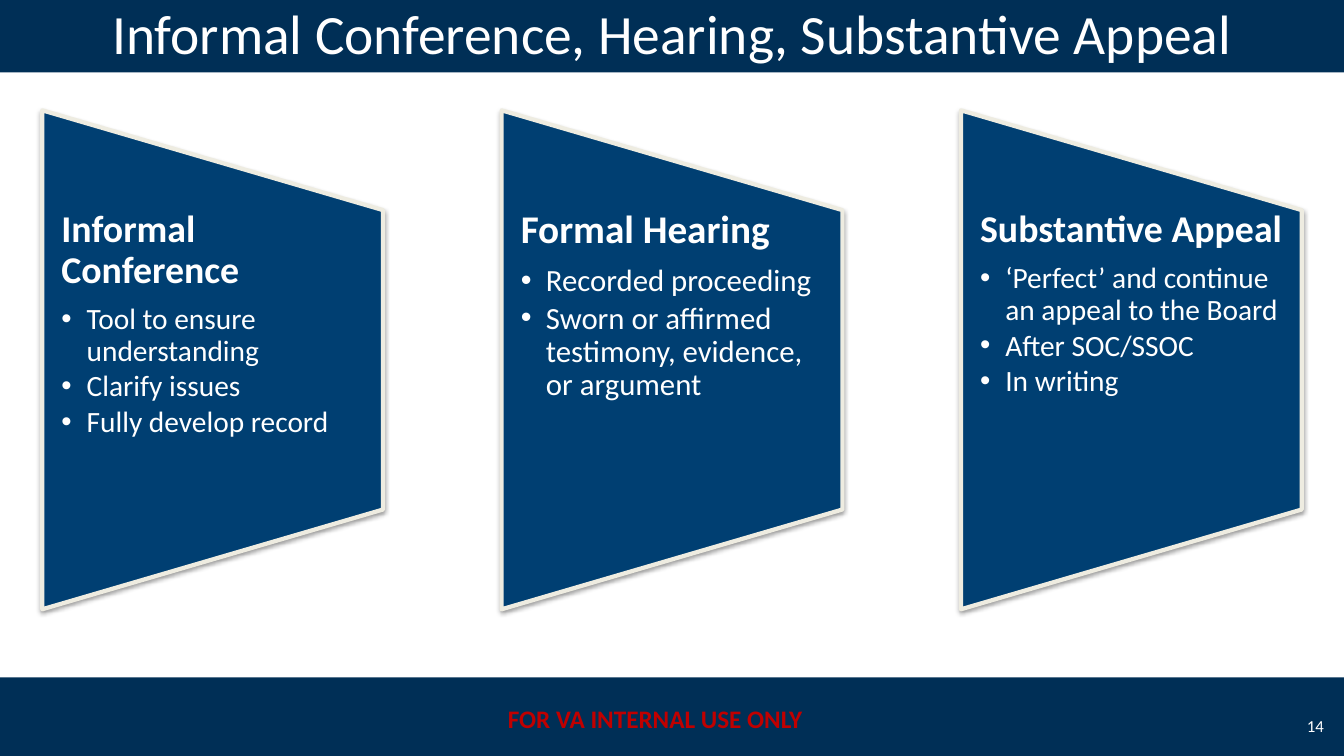
from dataclasses import dataclass

from lxml.etree import SubElement
from pptx import Presentation
from pptx.dml.color import RGBColor as RGB
from pptx.enum.shapes import MSO_SHAPE as SHAPE
from pptx.enum.text import MSO_ANCHOR as ANCHOR, PP_ALIGN as ALIGN
from pptx.oxml.ns import qn
from pptx.util import Pt


@dataclass(frozen=True)
class Theme:
    font: str = "Calibri"
    band: RGB = RGB(0x00, 0x2F, 0x56)
    panel: RGB = RGB(0x00, 0x3F, 0x72)
    edge: RGB = RGB(0xEE, 0xEC, 0xE1)
    text: RGB = RGB(0xFF, 0xFF, 0xFF)
    notice: RGB = RGB(0xC0, 0x00, 0x00)
    title_size: float = 39.6
    notice_size: float = 18
    number_size: float = 12


T = Theme()
WIDTH, HEIGHT = 960, 540
BAND_H = 57.6

PANELS = [
    ("Informal Conference", 27, 13.7,
     ["Tool to ensure understanding", "Clarify issues", "Fully develop record"]),
    ("Formal Hearing", 28, 14.4,
     ["Recorded proceeding", "Sworn or affirmed testimony, evidence, or argument"]),
    ("Substantive Appeal", 27, 13,
     ["‘Perfect’ and continue an appeal to the Board", "After SOC/SSOC", "In writing"]),
]


def add_text(tf, text, *, size, color=T.text, bold=False, align=ALIGN.LEFT,
             first=True, spacing=None, after=0, bullet=False):
    p = tf.paragraphs[0] if first else tf.add_paragraph()
    if bullet:
        pPr = p._p.get_or_add_pPr()
        pPr.set("marL", str(Pt(18)))
        pPr.set("indent", str(Pt(-18)))
        SubElement(pPr, qn("a:buFont"), typeface="Arial")
        SubElement(pPr, qn("a:buChar"), char="•")
    p.alignment = align
    p.line_spacing = spacing
    p.space_after = Pt(after)
    r = p.add_run()
    r.text = text
    r.font.name = T.font
    r.font.size = Pt(size)
    r.font.bold = bold
    r.font.color.rgb = color


def add_box(s, x, y, w, h, anchor=ANCHOR.MIDDLE, margins=(7.2, 3.6, 7.2, 3.6)):
    tf = s.shapes.add_textbox(Pt(x), Pt(y), Pt(w), Pt(h)).text_frame
    tf.word_wrap = True
    tf.vertical_anchor = anchor
    tf.margin_left, tf.margin_top, tf.margin_right, tf.margin_bottom = map(Pt, margins)
    return tf


def add_filled(s, kind, x, y, w, h, color):
    sp = s.shapes.add_shape(kind, Pt(x), Pt(y), Pt(w), Pt(h))
    sp.shadow.inherit = False
    sp.fill.solid()
    sp.fill.fore_color.rgb = color
    sp.line.fill.background()
    return sp


def add_shadow(sp):
    effects = sp._element.spPr.find(qn("a:effectLst"))
    shadow = SubElement(effects, qn("a:outerShdw"), blurRad=str(Pt(3.1)),
                        dist=str(Pt(1.6)), dir="5400000", rotWithShape="0")
    color = SubElement(shadow, qn("a:srgbClr"), val="000000")
    SubElement(color, qn("a:alpha"), val="38000")


def add_header(s, x, y, w, h):
    add_filled(s, SHAPE.RECTANGLE, x, y, w, h, T.band)
    add_text(add_box(s, x, y, w, h), "Informal Conference, Hearing, Substantive Appeal",
             size=T.title_size, align=ALIGN.CENTER)


def add_footer(s, x, y, w, h):
    add_filled(s, SHAPE.RECTANGLE, x, y, w, h, T.band)
    add_text(add_box(s, x + w * 0.325, y + 15, w * 0.325, 29), "FOR VA INTERNAL USE ONLY",
             size=T.notice_size, color=T.notice, bold=True, align=ALIGN.CENTER)
    add_text(add_box(s, x + w - 47.8, y + 20.2, 40.6, 28.8), "14",
             size=T.number_size, align=ALIGN.RIGHT)


def add_panel(s, x, y, w, h, heading, size, right, points):
    sp = add_filled(s, SHAPE.FLOWCHART_MANUAL_OPERATION,
                    x + (w - h) / 2, y + (h - w) / 2, h, w, T.panel)
    sp.rotation = 270
    sp.line.color.rgb = T.edge
    sp.line.width = Pt(3)
    add_shadow(sp)
    tf = add_box(s, x, y + h * 0.2, w, h * 0.6, ANCHOR.TOP, (13.7, 0, right, 0))
    add_text(tf, heading, size=size, bold=True, spacing=0.9, after=round(size * 0.33, 1))
    for point in points:
        add_text(tf, point, size=size - 6, first=False, spacing=0.9,
                 after=round(size * 0.1, 1), bullet=True)


def main():
    prs = Presentation()
    prs.slide_width, prs.slide_height = Pt(WIDTH), Pt(HEIGHT)
    s = prs.slides.add_slide(prs.slide_layouts[6])
    add_footer(s, 0, 483.8, WIDTH, BAND_H)
    add_header(s, 0, -5.8, WIDTH, BAND_H)
    for i, panel in enumerate(PANELS):
        add_panel(s, 30.2 + i * 328.1, 78.8, 243.4, 356.4, *panel)
    prs.save("out.pptx")


if __name__ == "__main__":
    main()
